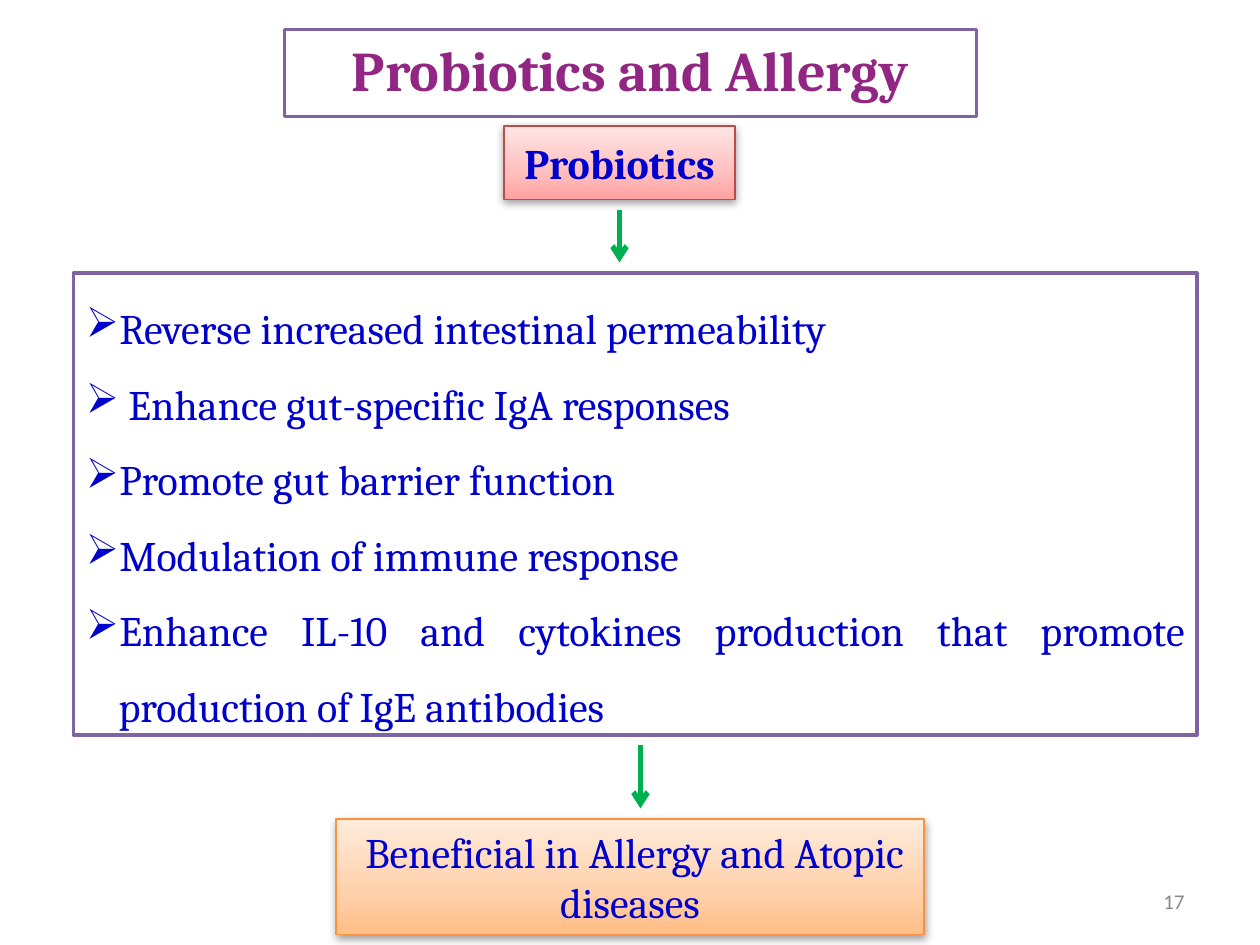
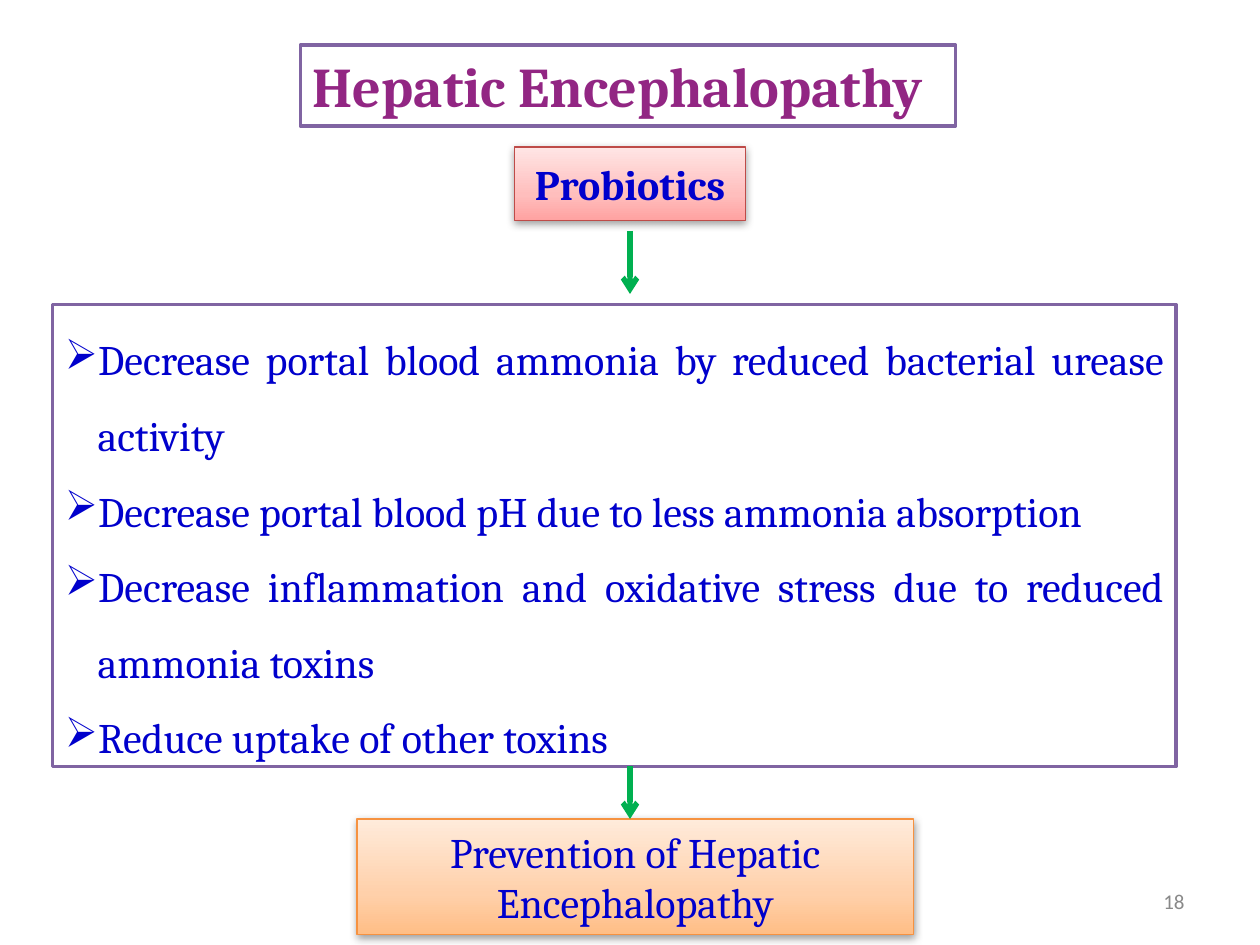
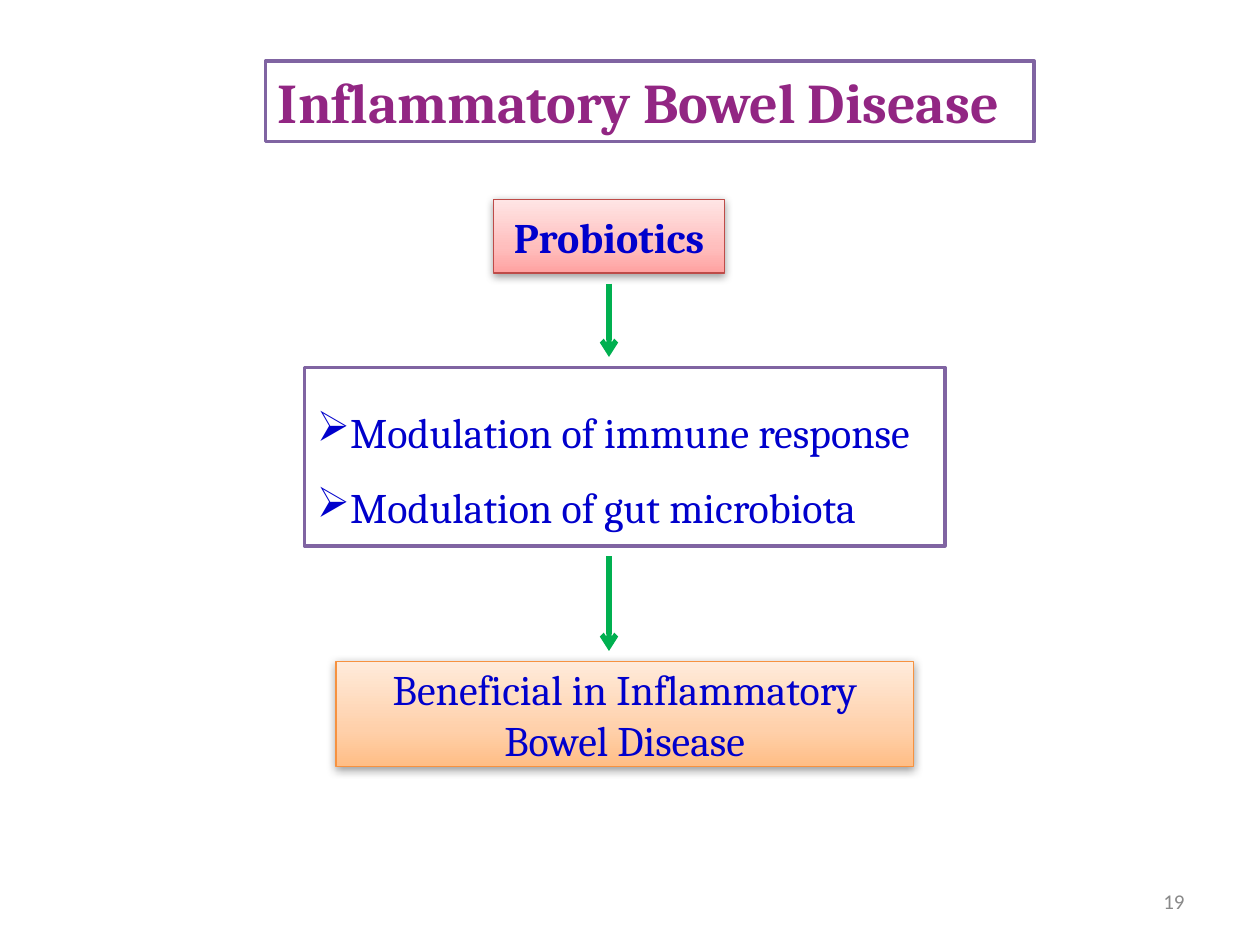
from dataclasses import dataclass

from lxml.etree import SubElement
from pptx import Presentation
from pptx.dml.color import RGBColor
from pptx.enum.shapes import MSO_CONNECTOR, MSO_SHAPE
from pptx.enum.text import MSO_ANCHOR, PP_ALIGN
from pptx.oxml.ns import qn
from pptx.util import Emu, Inches, Pt

COLORS = {
    "paper": "FFFFFF",
    "frame": "8064A2",
    "title": "922683",
    "body": "0000CC",
    "number": "898989",
    "arrow": "00B050",
    "trigger_line": "BE4B48",
    "outcome_line": "F69240",
    "shadow": "000000",
}
GRADIENTS = {
    "trigger": ("FFA2A1", "FFBEBD", "FFE5E5"),
    "outcome": ("FFBE86", "FFD0AA", "FFEBDB"),
}
GRADIENT_STOPS = (0, 35, 100)
WIDTH, HEIGHT = Inches(10), Inches(7.5)
COLUMNS, ROWS = 120, 90
HEADING_FONT, NUMBER_FONT = "Cambria", "Calibri"
TITLE_SIZE, BODY_SIZE, NUMBER_SIZE = 32, 24, 12
BULLET_INDENT = Inches(0.26)


@dataclass
class Box:
    """A rectangle in grid columns and rows."""

    left: float
    top: float
    width: float
    height: float

    @property
    def bottom(self):
        """Return the row of the lower edge."""
        return self.top + self.height

    def place(self):
        """Return left, top, width and height as lengths."""
        return across(self.left), down(self.top), across(self.width), down(self.height)


@dataclass
class Flow:
    """The content and layout of one cause-and-effect slide."""

    number: int
    title: str
    title_box: Box
    title_align: PP_ALIGN
    trigger_box: Box
    effects: list
    effects_box: Box
    outcome: str
    outcome_box: Box
    arrow_columns: tuple
    last_gaps: tuple = (1, 1)


def across(columns):
    """Turn grid columns into a length."""
    return Emu(round(WIDTH * columns / COLUMNS))


def down(rows):
    """Turn grid rows into a length."""
    return Emu(round(HEIGHT * rows / ROWS))


def color(name):
    """Return a named colour."""
    return RGBColor.from_string(COLORS[name])


def add_span(para, text, size, ink, font=HEADING_FONT, bold=False):
    """Add one styled run to a paragraph."""
    span = para.add_run()
    span.text = text
    span.font.name = font
    span.font.size = Pt(size)
    span.font.bold = bold
    span.font.color.rgb = color(ink)


def add_frame(page, box, line, width, anchor=MSO_ANCHOR.MIDDLE):
    """Add a white outlined rectangle without a shadow."""
    frame = page.shapes.add_shape(MSO_SHAPE.RECTANGLE, *box.place())
    frame.shadow.inherit = False
    frame.fill.solid()
    frame.fill.fore_color.rgb = color("paper")
    frame.line.color.rgb = color(line)
    frame.line.width = Pt(width)
    frame.text_frame.word_wrap = True
    frame.text_frame.vertical_anchor = anchor
    return frame


def shade(frame, tints):
    """Give a rectangle an upward gradient and a soft shadow below."""
    frame.fill.gradient()
    frame.fill.gradient_angle = 90
    properties = frame._element.spPr
    stops = properties.find(".//" + qn("a:gsLst"))
    for stop in list(stops):
        stops.remove(stop)
    for position, tint in zip(GRADIENT_STOPS, tints):
        stop = SubElement(stops, qn("a:gs"), pos=str(position * 1000))
        SubElement(stop, qn("a:srgbClr"), val=tint)
    shadow = SubElement(
        properties.find(qn("a:effectLst")), qn("a:outerShdw"),
        blurRad=str(Pt(5)), dist=str(Pt(1.6)), dir="5400000", rotWithShape="0",
    )
    tone = SubElement(shadow, qn("a:srgbClr"), val=COLORS["shadow"])
    SubElement(tone, qn("a:alpha"), val="38000")


def add_title(page, box, text, align):
    """Add the framed slide title."""
    frame = add_frame(page, box, "frame", 2, MSO_ANCHOR.TOP)
    para = frame.text_frame.paragraphs[0]
    para.alignment = align
    add_span(para, text, TITLE_SIZE, "title", bold=True)


def add_step(page, box, text, kind, bold=False):
    """Add a shaded step with centred text."""
    step = add_frame(page, box, kind + "_line", 0.75)
    shade(step, GRADIENTS[kind])
    para = step.text_frame.paragraphs[0]
    para.alignment = PP_ALIGN.CENTER
    add_span(para, text, BODY_SIZE, "body", bold=bold)


def add_effects(page, box, effects):
    """Add the framed list of effects."""
    text_frame = add_frame(page, box, "frame", 2).text_frame
    for index, effect in enumerate(effects):
        para = text_frame.add_paragraph() if index else text_frame.paragraphs[0]
        para.alignment = PP_ALIGN.JUSTIFY
        para.line_spacing = 1.5
        settings = para._p.get_or_add_pPr()
        settings.set("marL", str(BULLET_INDENT))
        settings.set("indent", str(-BULLET_INDENT))
        SubElement(settings, qn("a:buChar"), char="➢")
        add_span(para, effect, BODY_SIZE, "body")


def add_arrow(page, column, upper, lower, gaps=(1, 1)):
    """Add a downward arrow between two boxes, with a gap in rows at each end."""
    x = across(column)
    arrow = page.shapes.add_connector(
        MSO_CONNECTOR.STRAIGHT, x, down(upper.bottom + gaps[0]), x, down(lower.top - gaps[1])
    )
    arrow.line.color.rgb = color("arrow")
    arrow.line.width = Pt(3)
    SubElement(arrow.line._get_or_add_ln(), qn("a:tailEnd"), type="arrow")
    SubElement(arrow._element.spPr, qn("a:effectLst"))


def add_number(page, number):
    """Add the slide number at the lower right."""
    text_frame = page.shapes.add_textbox(*Box(86, 83.4, 28, 4.8).place()).text_frame
    text_frame.word_wrap = True
    text_frame.vertical_anchor = MSO_ANCHOR.MIDDLE
    para = text_frame.paragraphs[0]
    para.alignment = PP_ALIGN.RIGHT
    add_span(para, str(number), NUMBER_SIZE, "number", NUMBER_FONT)


def add_flow(deck, flow):
    """Add one slide that leads from probiotics to an outcome."""
    page = deck.slides.add_slide(deck.slide_layouts[6])
    add_title(page, flow.title_box, flow.title, flow.title_align)
    add_step(page, flow.trigger_box, "Probiotics", "trigger", bold=True)
    add_effects(page, flow.effects_box, flow.effects)
    add_step(page, flow.outcome_box, flow.outcome, "outcome")
    first, last = flow.arrow_columns
    add_arrow(page, first, flow.trigger_box, flow.effects_box)
    add_arrow(page, last, flow.effects_box, flow.outcome_box, flow.last_gaps)
    add_number(page, flow.number)


FLOWS = [
    Flow(
        number=17,
        title="Probiotics and Allergy",
        title_box=Box(27.1, 2.8, 65.9, 8.3),
        title_align=PP_ALIGN.CENTER,
        trigger_box=Box(48, 12, 22, 7),
        effects=[
            "Reverse increased intestinal permeability",
            " Enhance gut-specific IgA responses",
            "Promote gut barrier function",
            "Modulation of immune response",
            "Enhance IL-10 and cytokines production that promote production of IgE antibodies",
        ],
        effects_box=Box(7, 26, 107, 44),
        outcome=" Beneficial in Allergy and Atopic diseases",
        outcome_box=Box(32, 78, 56, 11),
        arrow_columns=(59, 61),
    ),
    Flow(
        number=18,
        title="Hepatic Encephalopathy",
        title_box=Box(28.6, 4.3, 62.4, 7.7),
        title_align=PP_ALIGN.LEFT,
        trigger_box=Box(49, 14, 22, 7),
        effects=[
            "Decrease portal blood ammonia by reduced bacterial urease activity",
            "Decrease portal blood pH due to less ammonia absorption",
            "Decrease inflammation and oxidative stress due to reduced ammonia toxins",
            "Reduce uptake of other toxins",
        ],
        effects_box=Box(5, 29, 107, 44),
        outcome="Prevention of Hepatic Encephalopathy",
        outcome_box=Box(34, 78, 53, 11),
        arrow_columns=(60, 60),
        last_gaps=(0, 0),
    ),
    Flow(
        number=19,
        title="Inflammatory Bowel Disease",
        title_box=Box(25.3, 5.8, 73.2, 7.7),
        title_align=PP_ALIGN.LEFT,
        trigger_box=Box(47, 19, 22, 7),
        effects=["Modulation of immune response", "Modulation of gut microbiota"],
        effects_box=Box(29, 35, 61, 17),
        outcome="Beneficial in Inflammatory Bowel Disease",
        outcome_box=Box(32, 63, 55, 10),
        arrow_columns=(58, 58),
    ),
]


def main():
    """Build the deck and save it."""
    deck = Presentation()
    deck.slide_width, deck.slide_height = WIDTH, HEIGHT
    for flow in FLOWS:
        add_flow(deck, flow)
    deck.save("out.pptx")


if __name__ == "__main__":
    main()
